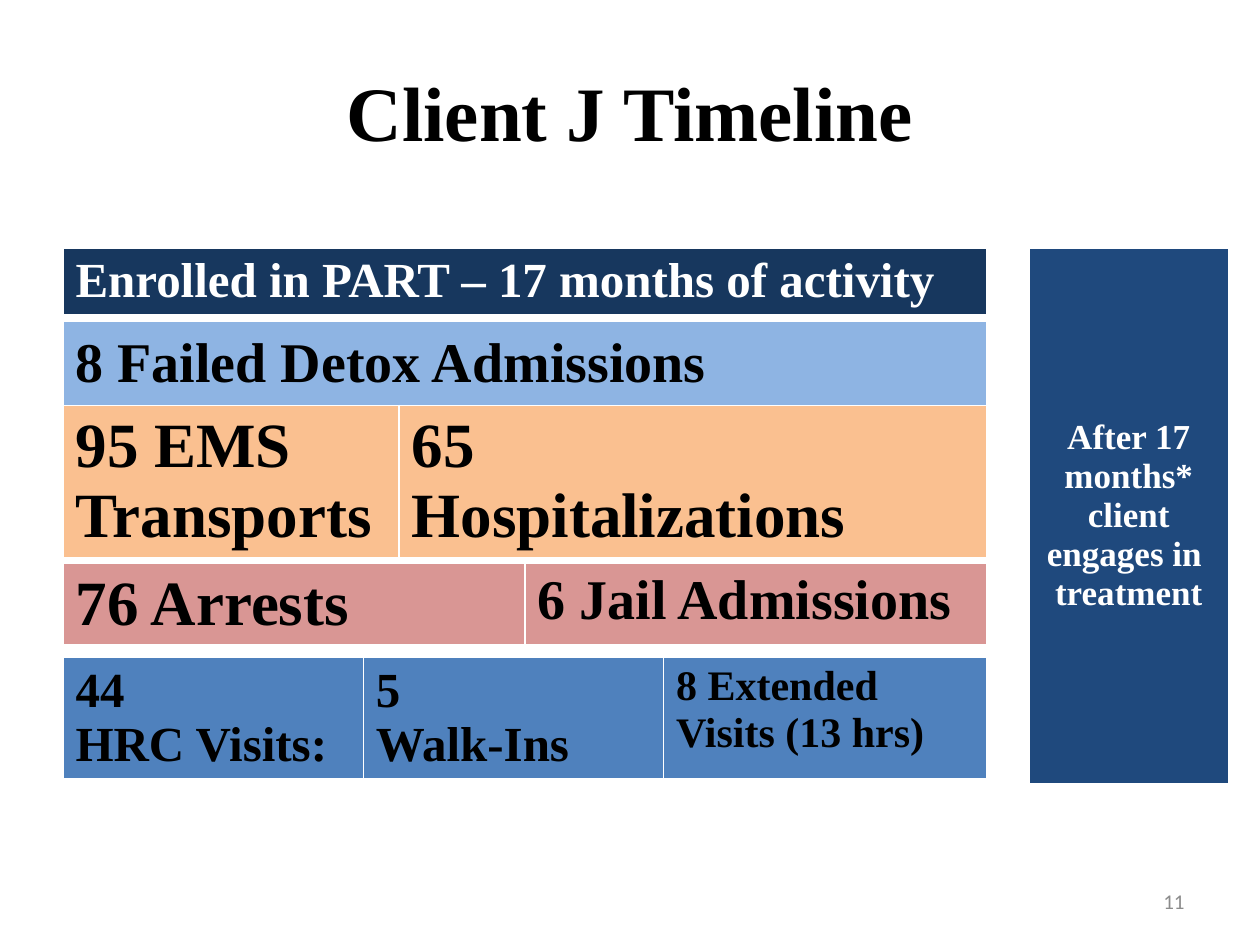
"""Build the Client J timeline slide from banded one-row tables."""
from dataclasses import dataclass

from pptx import Presentation
from pptx.dml.color import RGBColor
from pptx.enum.text import MSO_ANCHOR as Anchor, PP_ALIGN as Align
from pptx.slide import Slide
from pptx.text.text import TextFrame
from pptx.util import Inches, Pt

SLIDE_WIDTH, SLIDE_HEIGHT = Inches(10), Inches(7.5)
COLUMN, ROW = SLIDE_WIDTH / 120, SLIDE_HEIGHT / 90
BAND_LEFT, BAND_WIDTH, BANDS_TOP = 6, 88, 23.6


@dataclass(frozen=True)
class Theme:
    serif: str = "Times New Roman"
    sans: str = "Calibri"
    black: str = "000000"
    white: str = "FFFFFF"
    grey: str = "8C8C8C"
    navy: str = "17375E"
    dark_blue: str = "1F497D"
    blue: str = "4F81BD"
    light_blue: str = "8EB4E3"
    orange: str = "FAC090"
    red: str = "D99694"
    title: int = 44
    huge: int = 36
    large: int = 32
    medium: int = 28
    small: int = 24
    note: int = 20
    number: int = 12


THEME = Theme()


@dataclass(frozen=True)
class Box:
    left: float
    top: float
    width: float
    height: float

    def lengths(self) -> tuple[int, int, int, int]:
        return (round(self.left * COLUMN), round(self.top * ROW),
                round(self.width * COLUMN), round(self.height * ROW))


@dataclass(frozen=True)
class Entry:
    text: str
    size: int
    share: int = 1


@dataclass(frozen=True)
class Band:
    box: Box
    fill: str
    entries: tuple[Entry, ...]
    color: str = THEME.black
    anchor: Anchor = Anchor.TOP
    align: Align = Align.LEFT


def timeline_box(offset: float, height: float) -> Box:
    return Box(BAND_LEFT, BANDS_TOP + offset, BAND_WIDTH, height)


BANDS = (
    Band(timeline_box(7, 8), THEME.light_blue,
         (Entry("8 Failed Detox Admissions", THEME.large),), anchor=Anchor.MIDDLE),
    Band(timeline_box(15, 14.5), THEME.orange,
         (Entry("95 EMS Transports", THEME.huge, 4),
          Entry("65\nHospitalizations", THEME.huge, 7))),
    Band(timeline_box(30, 7.8), THEME.red,
         (Entry("76 Arrests", THEME.huge), Entry("6 Jail Admissions", THEME.large))),
    Band(timeline_box(39, 11.5), THEME.blue,
         (Entry("44\nHRC Visits:", THEME.medium, 13),
          Entry("5\nWalk-Ins", THEME.medium, 13),
          Entry("8 Extended Visits (13 hrs)", THEME.small, 14))),
    Band(timeline_box(0, 6.4), THEME.navy,
         (Entry("Enrolled in PART – 17 months of activity", THEME.medium),),
         THEME.white),
    Band(Box(98, BANDS_TOP, 19, 51), THEME.dark_blue,
         (Entry("After 17 months* client engages in \ntreatment", THEME.note),),
         THEME.white, Anchor.MIDDLE, Align.CENTER),
)


def write(frame: TextFrame, text: str, size: int, color: str, align: Align,
          font: str = THEME.serif, bold: bool = True) -> None:
    frame.text = text
    for paragraph in frame.paragraphs:
        paragraph.alignment = align
        for run in paragraph.runs:
            run.font.name = font
            run.font.size = Pt(size)
            run.font.bold = bold
            run.font.color.rgb = RGBColor.from_string(color)


def draw_band(slide: Slide, band: Band) -> None:
    left, top, width, height = band.box.lengths()
    table = slide.shapes.add_table(1, len(band.entries), left, top, width, height).table
    total = sum(entry.share for entry in band.entries)
    for index, entry in enumerate(band.entries):
        table.columns[index].width = round(width * entry.share / total)
        cell = table.cell(0, index)
        cell.fill.solid()
        cell.fill.fore_color.rgb = RGBColor.from_string(band.fill)
        cell.vertical_anchor = band.anchor
        write(cell.text_frame, entry.text, entry.size, band.color, band.align)


def draw_title(slide: Slide, text: str) -> None:
    title = slide.shapes.title
    title.left, title.top, title.width, title.height = Box(6, 3, 108, 15).lengths()
    title.text_frame.vertical_anchor = Anchor.MIDDLE
    write(title.text_frame, text, THEME.title, THEME.black, Align.CENTER)


def draw_page_number(slide: Slide, text: str) -> None:
    frame = slide.shapes.add_textbox(*Box(86, 83.4, 28, 4.8).lengths()).text_frame
    frame.word_wrap = True
    frame.vertical_anchor = Anchor.MIDDLE
    write(frame, text, THEME.number, THEME.grey, Align.RIGHT, THEME.sans, False)


def main() -> None:
    presentation = Presentation()
    presentation.slide_width, presentation.slide_height = SLIDE_WIDTH, SLIDE_HEIGHT
    slide = presentation.slides.add_slide(presentation.slide_layouts.get_by_name("Title Only"))
    draw_title(slide, "Client J Timeline")
    for band in BANDS:
        draw_band(slide, band)
    draw_page_number(slide, "11")
    presentation.save("out.pptx")


if __name__ == "__main__":
    main()
